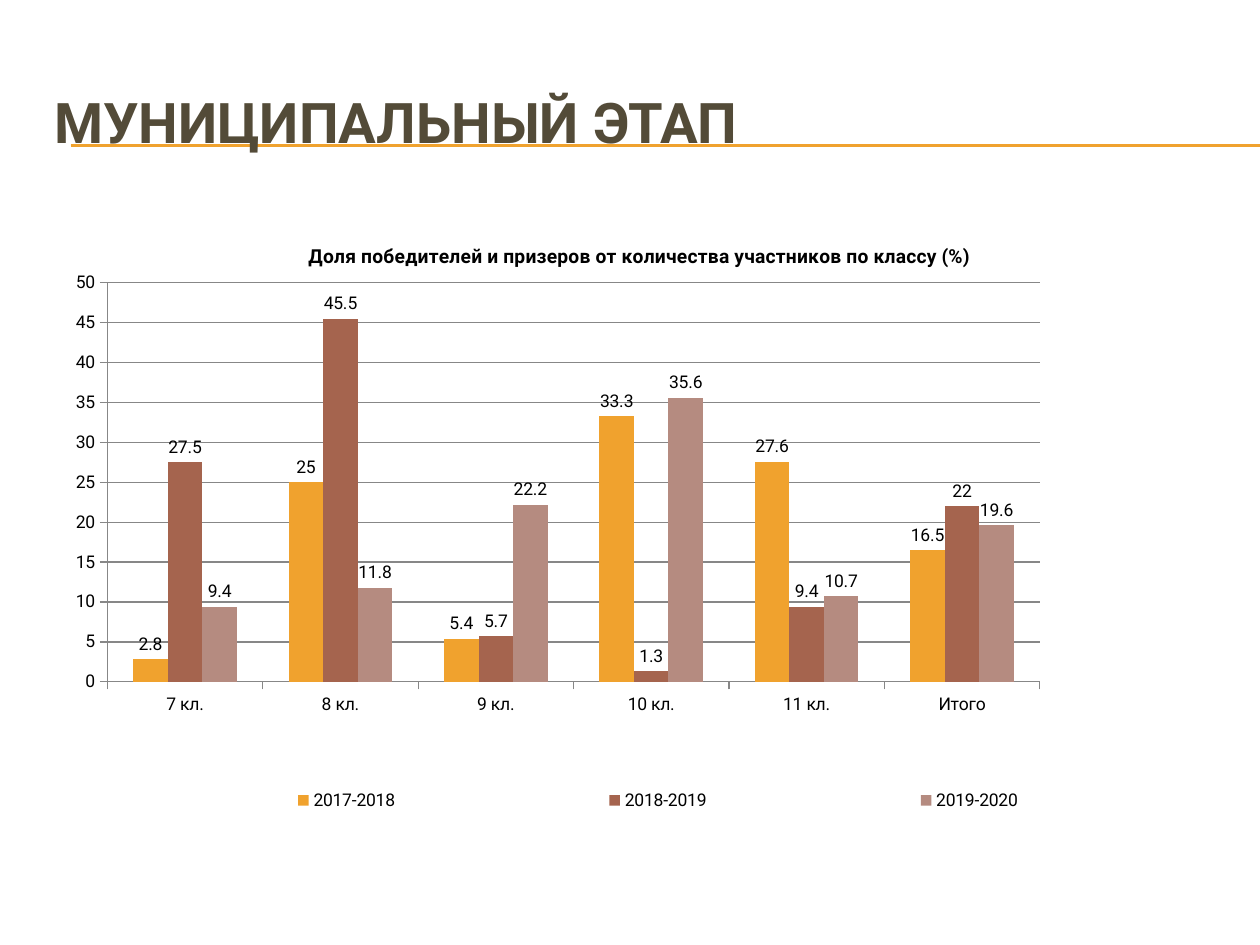
import pptx
import pptx.chart.data
import pptx.dml.color
import pptx.enum.chart
import pptx.enum.shapes
import pptx.enum.text
import pptx.oxml
import pptx.oxml.ns
import pptx.util
from pptx.util import Inches, Pt

CATEGORIES = ["7 кл.", "8 кл.", "9 кл.", "10 кл.", "11 кл.", "Итого"]
SERIES = [
    ("2017-2018", "F0A22E", (2.8, 25, 5.4, 33.3, 27.6, 16.5)),
    ("2018-2019", "A5644E", (27.5, 45.5, 5.7, 1.3, 9.4, 22)),
    ("2019-2020", "B58B80", (9.4, 11.8, 22.2, 35.6, 10.7, 19.6)),
]


def color(value):
    return pptx.dml.color.RGBColor.from_string(value)


def place(element, index, inner=False, **fractions):
    for layout in element.findall(pptx.oxml.ns.qn("c:layout")):
        element.remove(layout)
    target = '<c:layoutTarget val="inner"/>' if inner else ""
    modes = "".join(f'<c:{key}Mode val="edge"/>' for key in "xy")
    values = "".join(f'<c:{key} val="{value}"/>' for key, value in fractions.items())
    element.insert(index, pptx.oxml.parse_xml(
        f'<c:layout {pptx.oxml.ns.nsdecls("c")}><c:manualLayout>'
        f'{target}{modes}{values}</c:manualLayout></c:layout>'))


class SlideBuilder:
    font = "Roboto"
    title_color = "534B38"
    text_color = "000000"
    accent = "F0A22E"
    grid_color = "878787"

    def __init__(self, page):
        self.page = page

    def style(self, font, size, value, bold=False):
        font.name = self.font
        font.size = Pt(size)
        font.bold = bold
        font.color.rgb = color(value)

    def title(self, text, left, top, width, height):
        box = self.page.shapes.title
        box.left, box.top = Inches(left), Inches(top)
        box.width, box.height = Inches(width), Inches(height)
        frame = box.text_frame
        frame.text = text
        frame.word_wrap = True
        frame.vertical_anchor = pptx.enum.text.MSO_ANCHOR.MIDDLE
        para = frame.paragraphs[0]
        para.alignment = pptx.enum.text.PP_ALIGN.LEFT
        self.style(para.font, 32, self.title_color, True)

    def rule(self, left, right, top):
        line = self.page.shapes.add_connector(
            pptx.enum.shapes.MSO_CONNECTOR.STRAIGHT,
            Inches(left), Inches(top), Inches(right), Inches(top))
        line.line.color.rgb = color(self.accent)
        line.line.width = Pt(0.75)
        line.element.spPr.append(pptx.oxml.parse_xml(
            f'<a:effectLst {pptx.oxml.ns.nsdecls("a")}/>'))
        self.page.shapes.title.element.addprevious(line.element)

    def column_chart(self, heading, categories, series, left, top, width, height):
        data = pptx.chart.data.CategoryChartData()
        data.categories = categories
        for name, _, values in series:
            data.add_series(name, values)
        chart = self.page.shapes.add_chart(
            pptx.enum.chart.XL_CHART_TYPE.COLUMN_CLUSTERED,
            Inches(left), Inches(top), Inches(width), Inches(height), data).chart
        self.style(chart.font, 10, self.text_color)

        chart.has_title = True
        frame = chart.chart_title.text_frame
        frame.text = heading
        self.style(frame.paragraphs[0].font, 11, self.text_color, True)
        chart.chart_title.include_in_layout = False

        plot = chart.plots[0]
        plot.vary_by_categories = False
        plot.gap_width = 150
        plot.overlap = 0
        for column, (_, fill, _) in zip(plot.series, series):
            column.format.fill.solid()
            column.format.fill.fore_color.rgb = color(fill)
            labels = column.data_labels
            labels.show_value = True
            labels.position = pptx.enum.chart.XL_LABEL_POSITION.OUTSIDE_END
            self.style(labels.font, 10, self.text_color)

        scale = chart.value_axis
        scale.minimum_scale, scale.maximum_scale, scale.major_unit = 0, 50, 5
        scale.has_major_gridlines = True
        for line in (scale.major_gridlines.format.line, scale.format.line,
                     chart.category_axis.format.line):
            line.color.rgb = color(self.grid_color)
            line.width = Pt(0.75)

        chart.has_legend = True
        chart.legend.position = pptx.enum.chart.XL_LEGEND_POSITION.RIGHT
        chart.legend.include_in_layout = False
        self.style(chart.legend.font, 10, self.text_color)

        root = chart.element
        place(root.find(".//" + pptx.oxml.ns.qn("c:plotArea")), 0, True,
              x=0.055, y=0.11, w=0.779, h=0.64)
        place(root.find(".//" + pptx.oxml.ns.qn("c:title")), 1, x=0.22, y=0.04)
        place(root.find(".//" + pptx.oxml.ns.qn("c:legend")), 1,
              x=0.04, y=0.9, w=0.95, h=0.08)


def main():
    deck = pptx.Presentation()
    deck.slide_width, deck.slide_height = Inches(10), Inches(7.5)
    builder = SlideBuilder(deck.slides.add_slide(deck.slide_layouts[5]))
    builder.title("МУНИЦИПАЛЬНЫЙ ЭТАП", 0.33, 0.5, 9.5, 0.92)
    for top in (1.15, 1.16):
        builder.rule(0.56, 10, top)
    builder.column_chart(
        "Доля победителей и призеров от количества участников по классу (%)",
        CATEGORIES, SERIES, 0.33, 1.7, 9.5, 4.95)
    deck.save("out.pptx")


if __name__ == "__main__":
    main()
